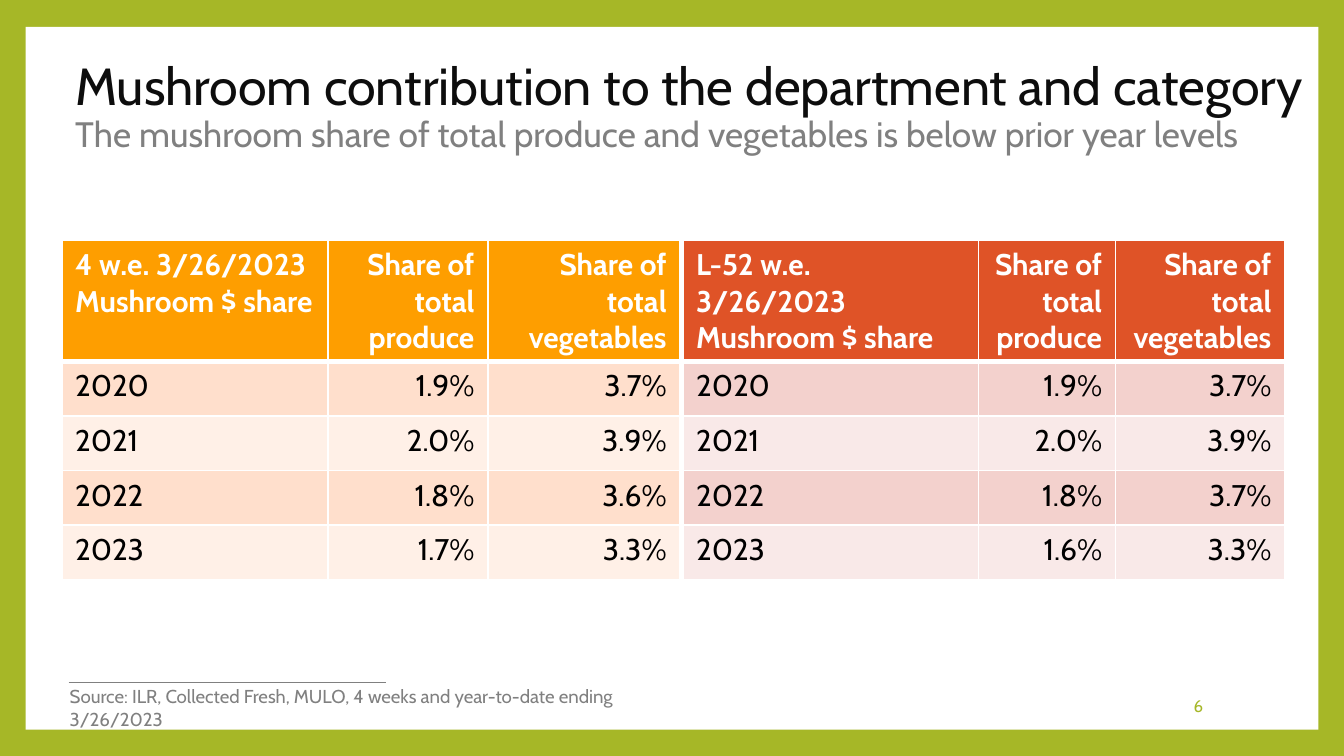
from pptx import Presentation
from pptx.dml.color import RGBColor
from pptx.enum.shapes import MSO_CONNECTOR, MSO_SHAPE
from pptx.enum.text import MSO_ANCHOR, MSO_AUTO_SIZE, PP_ALIGN
from pptx.oxml.ns import qn
from pptx.util import Inches, Pt
from lxml.etree import SubElement

COLORS = {
    "green": "A6B727", "white": "FFFFFF", "black": "000000",
    "ink": "0D0D0D", "gray": "808080",
    "orange": "FE9E00", "orange_dark": "FFDFCC", "orange_light": "FFF0E7",
    "red": "DF5327", "red_dark": "F3D1CD", "red_light": "F9E9E8",
}


def rgb(name):
    return RGBColor.from_string(COLORS[name])


class SlideBuilder:
    font = "Cabin"

    def __init__(self, slide):
        self.s = slide

    def run(self, p, text, size, color, bold=False):
        r = p.add_run()
        r.text = text
        r.font.name = self.font
        r.font.size = Pt(size)
        r.font.bold = bold
        r.font.color.rgb = rgb(color)

    def background(self, color):
        fill = self.s.background.fill
        fill.solid()
        fill.fore_color.rgb = rgb(color)

    def panel(self, x, y, w, h, color):
        sp = self.s.shapes.add_shape(
            MSO_SHAPE.RECTANGLE, Inches(x), Inches(y), Inches(w), Inches(h))
        sp.shadow.inherit = False
        sp.fill.solid()
        sp.fill.fore_color.rgb = rgb(color)
        sp.line.fill.background()

    def rule(self, x1, x2, y, color, width):
        line = self.s.shapes.add_connector(
            MSO_CONNECTOR.STRAIGHT, Inches(x1), Inches(y), Inches(x2), Inches(y))
        line.line.color.rgb = rgb(color)
        line.line.width = Pt(width)
        SubElement(line._element.spPr, qn("a:effectLst"))

    def title(self, x, y, w, h, heading, subheading):
        sp = self.s.shapes.title
        # The placeholder comes first on the slide, so bring it above the panel
        self.s.shapes._spTree.append(sp._element)
        sp.left, sp.top, sp.width, sp.height = map(Inches, (x, y, w, h))
        tf = sp.text_frame
        tf.word_wrap = True
        tf.auto_size = MSO_AUTO_SIZE.NONE
        tf.vertical_anchor = MSO_ANCHOR.MIDDLE
        p = tf.paragraphs[0]
        p.alignment = PP_ALIGN.LEFT
        p.line_spacing = 0.9
        self.run(p, heading, 27.9, "ink")
        p.add_line_break()
        self.run(p, subheading, 18.9, "gray")

    def text(self, x, y, w, h, text, size, color,
             align=PP_ALIGN.LEFT, anchor=MSO_ANCHOR.TOP):
        sp = self.s.shapes.add_textbox(Inches(x), Inches(y), Inches(w), Inches(h))
        tf = sp.text_frame
        tf.word_wrap = True
        tf.vertical_anchor = anchor
        p = tf.paragraphs[0]
        p.alignment = align
        self.run(p, text, size, color)

    def border(self, cell, bottom):
        tc_pr = cell._tc.get_or_add_tcPr()
        for side, width in (("L", 1), ("R", 1), ("T", 1), ("B", bottom)):
            ln = SubElement(tc_pr, qn(f"a:ln{side}"), w=str(Pt(width)))
            fill = SubElement(ln, qn("a:solidFill"))
            SubElement(fill, qn("a:srgbClr"), val=COLORS["white"])

    def table(self, x, y, widths, height, rows, theme):
        # Equal rows; the three-line header grows to fit its text
        frame = self.s.shapes.add_table(
            len(rows), len(widths), Inches(x), Inches(y),
            Inches(sum(widths)), Inches(height))
        table = frame.table
        table.horz_banding = False
        for col, width in zip(table.columns, widths):
            col.width = Inches(width)
        for i, values in enumerate(rows):
            header = i == 0
            shade = theme if header else theme + ("_dark" if i % 2 else "_light")
            for j, value in enumerate(values):
                cell = table.cell(i, j)
                # Borders precede the fill in the cell properties
                self.border(cell, 3 if header else 1)
                cell.fill.solid()
                cell.fill.fore_color.rgb = rgb(shade)
                p = cell.text_frame.paragraphs[0]
                p.alignment = PP_ALIGN.RIGHT if j else PP_ALIGN.LEFT
                for k, part in enumerate(value.split("\n")):
                    if k:
                        p.add_line_break()
                    self.run(p, part, 16, "white" if header else "black", header)
        frame.height = Inches(2.52)


def main():
    prs = Presentation()
    prs.slide_width = Inches(10)
    prs.slide_height = prs.slide_width * 9 // 16
    b = SlideBuilder(prs.slides.add_slide(prs.slide_layouts[5]))

    # Frame and footnote rule
    b.background("green")
    b.panel(0.19, 0.2, 9.62, 5.23, "white")
    b.rule(0.51, 2.87, 5.08, "gray", 0.79)

    # Title
    b.title(0.46, 0.53, 9.58, 0.54,
            "Mushroom contribution to the department and category",
            "The mushroom share of total produce and vegetables is below prior year levels")

    # Page number
    b.text(7.65, 5.1, 1.4, 0.3, "6", 9, "green", PP_ALIGN.RIGHT, MSO_ANCHOR.MIDDLE)

    # Share tables
    years = ["2020", "2021", "2022", "2023"]
    tables = [
        (0.46, [1.98, 1.19, 1.43], "orange", "4 w.e. 3/26/2023\nMushroom $ share",
         ["1.9%", "2.0%", "1.8%", "1.7%"], ["3.7%", "3.9%", "3.6%", "3.3%"]),
        (5.08, [2.2, 1.02, 1.26], "red", "L-52 w.e. 3/26/2023\nMushroom $ share",
         ["1.9%", "2.0%", "1.8%", "1.6%"], ["3.7%", "3.9%", "3.7%", "3.3%"]),
    ]
    for x, widths, theme, period, produce, vegetables in tables:
        header = (period, "Share of total produce", "Share of total vegetables")
        b.table(x, 1.79, widths, 2.03,
                [header, *zip(years, produce, vegetables)], theme)

    # Source
    b.text(0.42, 5.05, 4.92, 0.27,
           "Source: ILR, Collected Fresh, MULO, 4 weeks and year-to-date ending 3/26/2023",
           10, "gray")

    prs.save("out.pptx")


if __name__ == "__main__":
    main()
